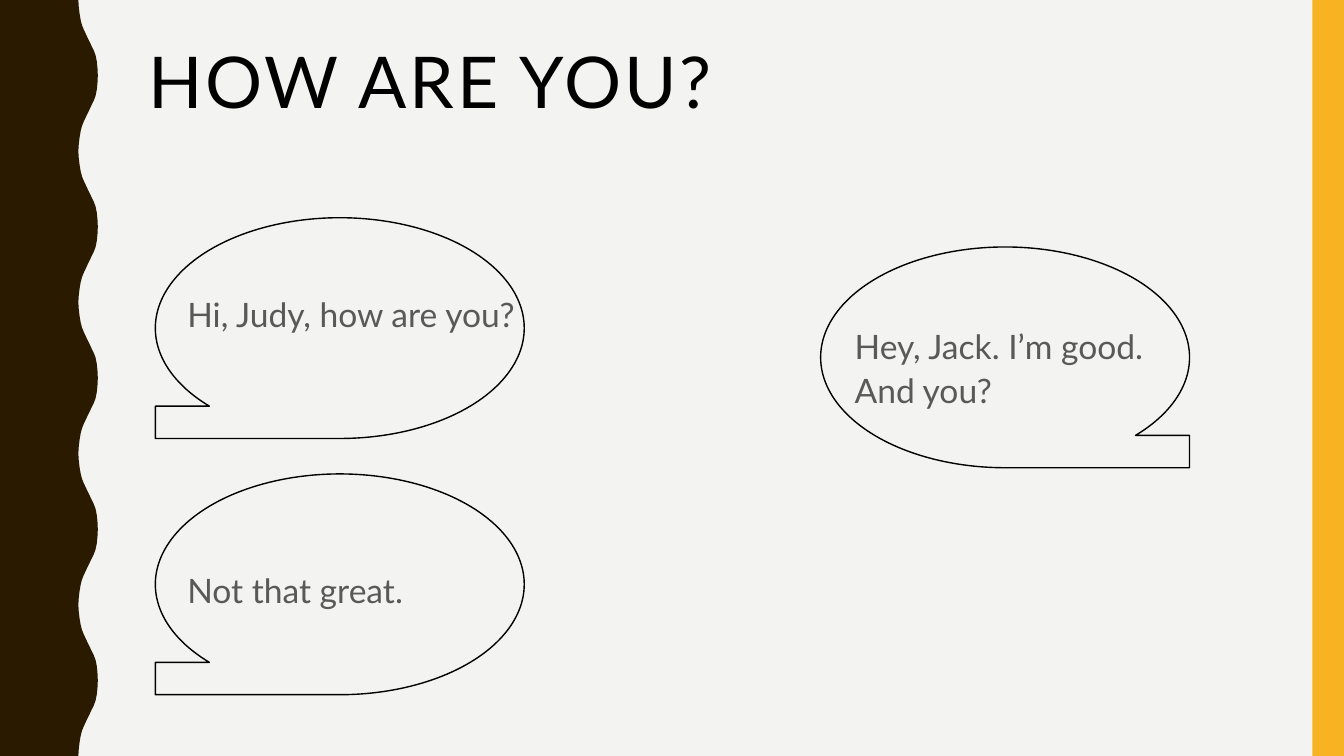
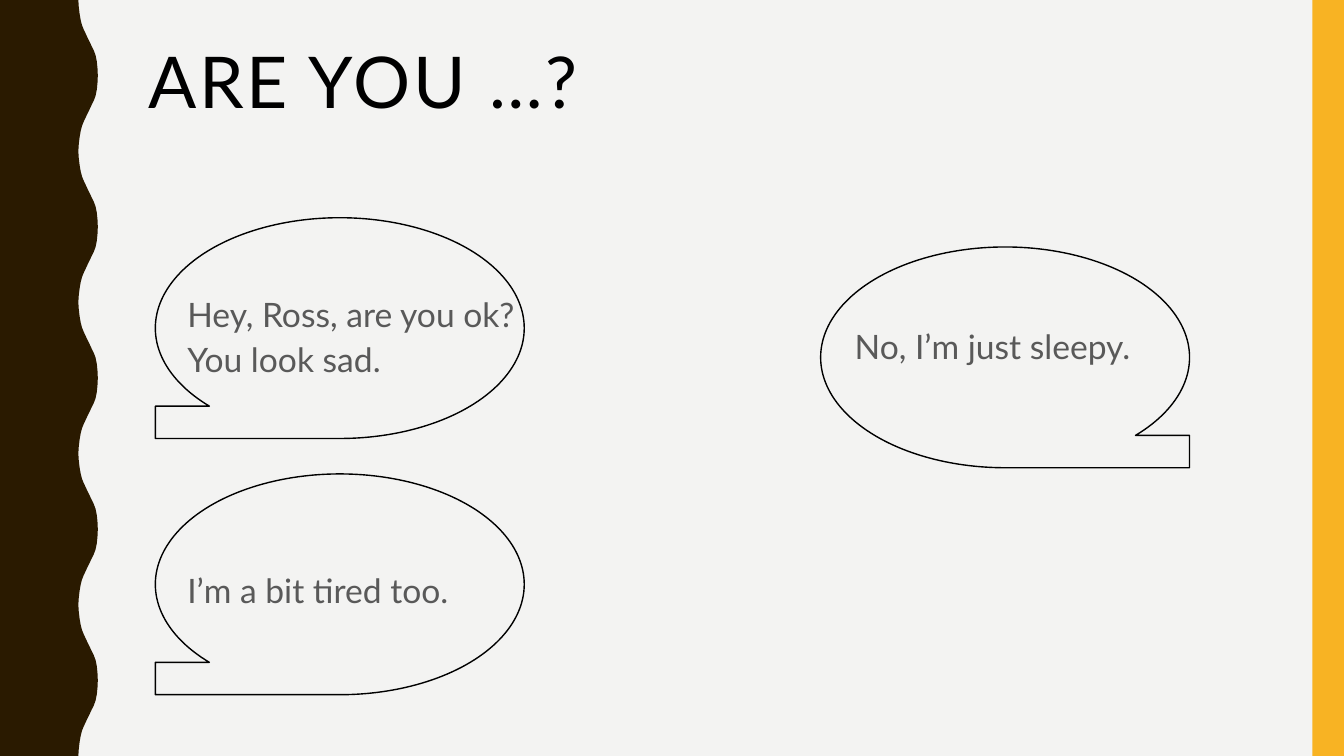
from pptx import Presentation
from pptx.dml.color import RGBColor
from pptx.enum.shapes import MSO_SHAPE
from pptx.enum.text import MSO_ANCHOR, MSO_AUTO_SIZE, PP_ALIGN
from pptx.util import Pt

PAPER = RGBColor(0xF3, 0xF3, 0xF2)
BROWN = RGBColor(0x2A, 0x1A, 0x00)
AMBER = RGBColor(0xF8, 0xB3, 0x23)
BLACK = RGBColor(0x00, 0x00, 0x00)
GREY = RGBColor(0x59, 0x59, 0x59)
FONT = "Lato"

WIDTH, HEIGHT = 960, 540
STRIPE_WIDTH = 22.5
WAVE_PERIOD = 108
HALF_WAVE = [
    (56, 0), (56.3, 5), (56.9, 10), (57.7, 14.5), (58.6, 18),
    (59.8, 21), (61.2, 24), (62.6, 27), (64.1, 30), (65.5, 33),
    (67, 36), (68.3, 39.5), (69.2, 44), (69.7, 49), (69.9, 54),
]
BUBBLE_WIDTH, BUBBLE_HEIGHT = 263.5, 157.7

BUBBLES = [(111, 155.5, True), (111, 338.5, True), (586.2, 176.4, False)]
SPEECH_BOXES = [
    (126.7, 203.8, 361.5, 103),
    (603.4, 226.1, 263.5, 70.6),
    (126.7, 401, 361.5, 103),
]
DIALOGUES = [
    ("HOW ARE YOU?", [
        ["Hi, Judy, how are you?"],
        ["Hey, Jack. I’m good.", "And you?"],
        ["Not that great."],
    ]),
    ("ARE YOU …?", [
        ["Hey, Ross, are you ok?", "You look sad."],
        ["No, I’m just sleepy."],
        ["I’m a bit tired too."],
    ]),
]


class DialogueDeck:
    def __init__(self):
        self.deck = Presentation()
        self.deck.slide_width = Pt(WIDTH)
        self.deck.slide_height = Pt(HEIGHT)
        self.layout = self.deck.slide_layouts.get_by_name("Title Only")
        self.page = None
        background = self.deck.slide_master.background.fill
        background.solid()
        background.fore_color.rgb = PAPER
        title = self.layout.placeholders[0]
        self.place(title, 98.6, 30.2, 801.4, 117.4)
        title.text_frame.vertical_anchor = MSO_ANCHOR.TOP

    def place(self, shape, left, top, width, height):
        shape.left, shape.top = Pt(left), Pt(top)
        shape.width, shape.height = Pt(width), Pt(height)

    def new_page(self):
        first = self.page is None
        self.page = self.deck.slides.add_slide(self.layout)
        if first:
            self.share_bands()

    def share_bands(self):
        stripe = self.page.shapes.add_shape(
            MSO_SHAPE.RECTANGLE, Pt(WIDTH - STRIPE_WIDTH), Pt(0),
            Pt(STRIPE_WIDTH), Pt(HEIGHT))
        bands = [(self.wavy_band(), BROWN), (stripe, AMBER)]
        for number, (band, color) in enumerate(bands, 101):
            band.shadow.inherit = False
            band.fill.solid()
            band.fill.fore_color.rgb = color
            band.line.fill.background()
            band.element.xpath(".//p:cNvPr")[0].set("id", str(number))
            self.layout.shapes.element.append(band.element)

    def wavy_band(self):
        back = [(x, WAVE_PERIOD - y) for x, y in reversed(HALF_WAVE[:-1])]
        wave = HALF_WAVE + back
        edge = [(x, start + y)
                for start in range(0, HEIGHT, WAVE_PERIOD) for x, y in wave]
        outline = self.page.shapes.build_freeform(Pt(0), Pt(0))
        outline.add_line_segments(
            [(Pt(x), Pt(y)) for x, y in edge + [(0, HEIGHT)]])
        return outline.convert_to_shape()

    def add_span(self, para, text, size, color):
        span = para.add_run()
        span.text = text
        span.font.name = FONT
        span.font.size = Pt(size)
        span.font.color.rgb = color
        return span

    def title(self, text):
        frame = self.page.shapes.title.text_frame
        frame.auto_size = MSO_AUTO_SIZE.NONE
        para = frame.paragraphs[0]
        para.alignment = PP_ALIGN.LEFT
        para.line_spacing = 0.9
        span = self.add_span(para, text, 51, BLACK)
        span.font._element.set("spc", "200")

    def speech(self, lines, left, top, width, height):
        box = self.page.shapes.add_textbox(
            Pt(left), Pt(top), Pt(width), Pt(height))
        box.text_frame.word_wrap = True
        para = box.text_frame.paragraphs[0]
        para.line_spacing = 1.1
        for index, line in enumerate(lines):
            if index:
                para.add_line_break()
            self.add_span(para, line, 24, GREY)

    def bubble(self, left, top, flipped):
        bubble = self.page.shapes.add_shape(
            MSO_SHAPE.FLOWCHART_SEQUENTIAL_ACCESS_STORAGE,
            Pt(left), Pt(top), Pt(BUBBLE_WIDTH), Pt(BUBBLE_HEIGHT))
        bubble.shadow.inherit = False
        bubble.fill.background()
        bubble.line.color.rgb = BLACK
        bubble.line.width = Pt(1)
        if flipped:
            bubble.element.spPr.get_or_add_xfrm().set("flipH", "1")


def main():
    builder = DialogueDeck()
    for title, speeches in DIALOGUES:
        builder.new_page()
        builder.title(title)
        for lines, area in zip(speeches, SPEECH_BOXES):
            builder.speech(lines, *area)
        for bubble in BUBBLES:
            builder.bubble(*bubble)
    builder.deck.save("out.pptx")


if __name__ == "__main__":
    main()
